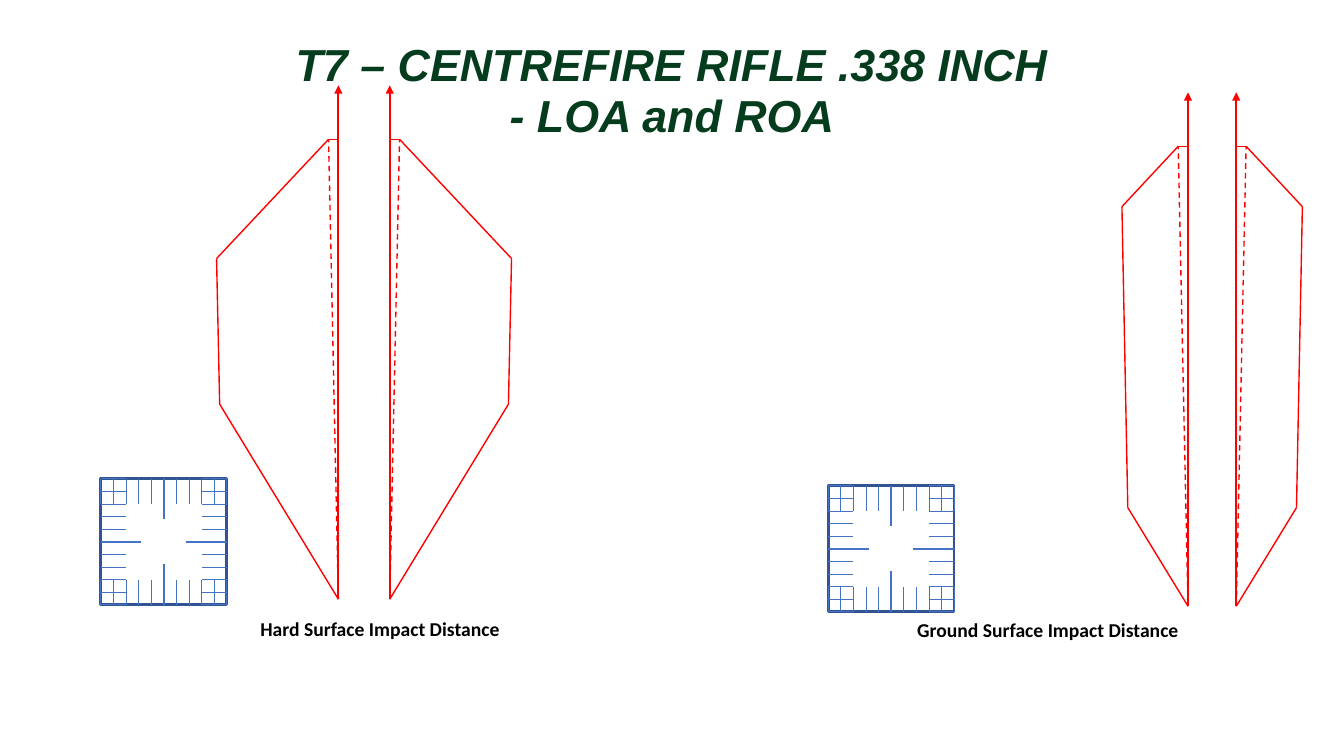
from pptx import Presentation
from pptx.dml.color import RGBColor
from pptx.enum.dml import MSO_LINE
from pptx.enum.shapes import MSO_CONNECTOR, MSO_SHAPE
from pptx.enum.text import MSO_ANCHOR, PP_ALIGN
from pptx.oxml.ns import qn
from pptx.util import Pt
from lxml.etree import SubElement

RED, BLUE, NAVY = "FF0000", "4472C4", "325491"
GREEN, BLACK = "053C1E", "000000"

GRID_SIZE, GRID_STEPS = 90, 10
MINOR_TICK, MAJOR_TICK = 18, 29
# Heights shared by both danger areas, measured from the top of the grid
BASE, SHOULDER, ARROW_TIP = 86, -242.5, -281
SHOULDER_WIDTH = 7


def color(hex_string):
    return RGBColor.from_string(hex_string)


def add_line(shapes, start, end, hex_string, width, dashed=False, arrow=False):
    points = [Pt(value) for value in (*start, *end)]
    connector = shapes.add_connector(MSO_CONNECTOR.STRAIGHT, *points)
    connector.line.color.rgb = color(hex_string)
    connector.line.width = Pt(width)
    if dashed:
        connector.line.dash_style = MSO_LINE.DASH
    properties = connector._element.spPr
    if arrow:
        SubElement(properties.find(qn("a:ln")), qn("a:tailEnd"), type="triangle")
    SubElement(properties, qn("a:effectLst"))


def add_text(slide, box, lines, font_name, size, hex_string,
             italic=False, line_spacing=None, gap=0, margin_top=3.6):
    text_box = slide.shapes.add_textbox(*[Pt(value) for value in box])
    frame = text_box.text_frame
    frame.word_wrap = True
    frame.vertical_anchor = MSO_ANCHOR.TOP
    frame.margin_top = Pt(margin_top)
    for index, line in enumerate(lines):
        paragraph = frame.add_paragraph() if index else frame.paragraphs[0]
        paragraph.text = line
        paragraph.alignment = PP_ALIGN.CENTER
        if line_spacing:
            paragraph.line_spacing = line_spacing
        if index and gap:
            paragraph.space_before = Pt(gap)
        font = paragraph.font
        font.name, font.size = font_name, Pt(size)
        font.bold, font.italic = True, italic
        font.color.rgb = color(hex_string)


def add_grid(shapes, left, top):
    # Frame
    frame = shapes.add_shape(MSO_SHAPE.RECTANGLE, Pt(left), Pt(top),
                             Pt(GRID_SIZE), Pt(GRID_SIZE))
    frame.shadow.inherit = False
    frame.fill.background()
    frame.line.color.rgb = color(NAVY)
    frame.line.width = Pt(2)

    # Ticks pointing inwards from all four sides
    right, bottom = left + GRID_SIZE, top + GRID_SIZE
    for step in range(GRID_STEPS + 1):
        offset = step * GRID_SIZE / GRID_STEPS
        middle = step == GRID_STEPS // 2
        length, width = (MAJOR_TICK, 1.75) if middle else (MINOR_TICK, 0.5)
        x, y = left + offset, top + offset
        for start, end in (
            ((left, y), (left + length, y)),
            ((right, y), (right - length, y)),
            ((x, top), (x, top + length)),
            ((x, bottom), (x, bottom - length)),
        ):
            add_line(shapes, start, end, BLUE, width)


def add_half_area(shapes, axis, top, side, lower, upper):
    """Draw one half; side is -1 for left of the axis and 1 for right."""
    def point(distance, height):
        return axis + side * distance, top + height

    base, shoulder = point(0, BASE), point(SHOULDER_WIDTH, SHOULDER)
    outline = [base, point(*lower), point(*upper), shoulder, point(0, SHOULDER)]
    add_line(shapes, base, point(0, ARROW_TIP), RED, 1.5, arrow=True)
    add_line(shapes, base, shoulder, RED, 1, dashed=True)
    for start, end in zip(outline, outline[1:]):
        add_line(shapes, start, end, RED, 1)


def add_danger_area(slide, left, top, axes, lower, upper):
    """Place grid and both halves; axes are distances from the grid's left."""
    shapes = slide.shapes.add_group_shape().shapes
    add_grid(shapes, left, top)
    for side, axis in zip((-1, 1), axes):
        add_half_area(shapes, left + axis, top, side, lower, upper)


def main():
    presentation = Presentation()
    presentation.slide_width, presentation.slide_height = Pt(960), Pt(540)
    slide = presentation.slides.add_slide(presentation.slide_layouts[6])

    # Captions
    add_text(slide, (135.5, 437, 272, 24.5), ["Hard Surface Impact Distance"],
             "Calibri", 14, BLACK)
    add_text(slide, (612.5, 437.5, 272, 41), ["Ground Surface Impact Distance"],
             "Calibri", 14, BLACK)

    # Title
    add_text(slide, (0, 24.5, 960, 67),
             ["T7 – CENTREFIRE RIFLE .338 INCH", "- LOA and ROA"],
             "Arial", 32, GREEN, italic=True, line_spacing=0.9, gap=2,
             margin_top=6)

    # Danger areas
    add_danger_area(slide, 72, 342, axes=(169.7, 206.4),
                    lower=(84.8, -53.3), upper=(87, -157.3))
    add_danger_area(slide, 591.5, 347, axes=(257.1, 291.6),
                    lower=(43, 15.6), upper=(47.2, -199.4))

    presentation.save("out.pptx")


if __name__ == "__main__":
    main()
